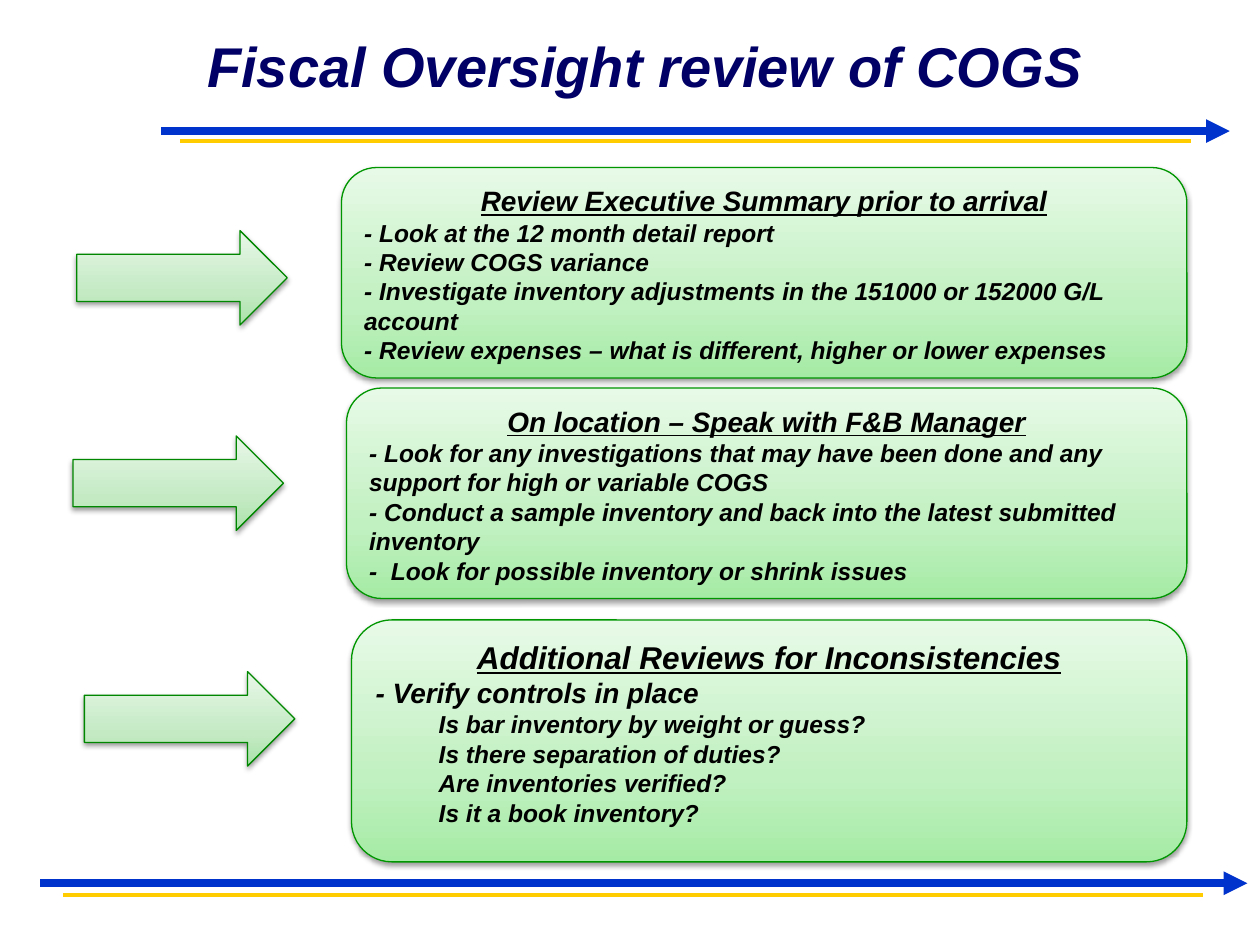
from dataclasses import dataclass
from typing import Any, NamedTuple

from pptx import Presentation
from pptx.dml.color import RGBColor as RGB
from pptx.enum.shapes import MSO_CONNECTOR as Link, MSO_SHAPE as Form
from pptx.enum.text import MSO_ANCHOR as Anchor, MSO_AUTO_SIZE as Fit, PP_ALIGN as Align
from pptx.oxml import parse_xml
from pptx.oxml.ns import nsdecls, qn
from pptx.util import Inches, Pt


@dataclass(frozen=True)
class Theme:
    font: str = "Arial"
    navy: str = "000066"
    ink: str = "000000"
    blue: str = "0033CC"
    gold: str = "FFCC00"
    title: int = 32
    large: int = 18
    head: int = 16
    body: int = 14
    thick: float = 4.5
    thin: float = 2.25
    edge: float = 0.75


class Paint(NamedTuple):
    stops: tuple[str, str, str]
    line: str


class Rule(NamedTuple):
    left: float
    right: float
    y: float
    color: str
    width: float
    arrow: bool


class Line(NamedTuple):
    text: str
    size: int
    level: int = 0


class Card(NamedTuple):
    left: float
    top: float
    height: float
    head: Line
    lines: list[Line]


class Arrow(NamedTuple):
    left: float
    top: float


LOOK = Theme()
MINT = Paint(("A5EBA5", "C1F0C1", "E7FAE7"), "009600")
SAGE = Paint(("AAE2AA", "C4EAC4", "E8F7E8"), "008700")
EDGE = 9.42

RULES = [
    Rule(1.28, 9.76, 1.04, LOOK.blue, LOOK.thick, True),
    Rule(1.43, 9.45, 1.12, LOOK.gold, LOOK.thin, False),
    Rule(0.32, 9.9, 7.01, LOOK.blue, LOOK.thick, True),
    Rule(0.5, 9.55, 7.1, LOOK.gold, LOOK.thin, False),
]
CARDS = [
    Card(2.75, 3.08, 1.67, Line("On location – Speak with F&B Manager", LOOK.head), [
        Line("- Look for any investigations that may have been done and any "
             "support for high or variable COGS", LOOK.body),
        Line("- Conduct a sample inventory and back into the latest submitted inventory", LOOK.body),
        Line("-  Look for possible inventory or shrink issues", LOOK.body),
    ]),
    Card(2.71, 1.33, 1.67, Line("Review Executive Summary prior to arrival", LOOK.head), [
        Line("- Look at the 12 month detail report", LOOK.body),
        Line("- Review COGS variance", LOOK.body),
        Line("- Investigate inventory adjustments in the 151000 or 152000 G/L account", LOOK.body),
        Line("- Review expenses – what is different, higher or lower expenses", LOOK.body),
    ]),
    Card(2.79, 4.92, 1.92, Line("Additional Reviews for Inconsistencies", LOOK.large), [
        Line("- Verify controls in place", LOOK.head),
        Line("Is bar inventory by weight or guess?", LOOK.body, 1),
        Line("Is there separation of duties?", LOOK.body, 1),
        Line("Are inventories verified?", LOOK.body, 1),
        Line("Is it a book inventory?", LOOK.body, 1),
    ]),
]
ARROWS = [Arrow(0.58, 3.46), Arrow(0.61, 1.83), Arrow(0.67, 5.33)]


def assign(item: Any, form: dict[str, Any]) -> None:
    """Set each named value on an object."""
    for name, value in form.items():
        setattr(item, name, value)


def style(font: Any, size: int, color: str, under: bool = False) -> None:
    """Give a font the bold italic look of the slide."""
    assign(font, {"name": LOOK.font, "size": Pt(size), "bold": True,
                  "italic": True, "underline": under})
    font.color.rgb = RGB.from_string(color)


def draw_title(slide: Any, text: str) -> None:
    """Place and format the title."""
    title = slide.shapes.title
    assign(title, {"left": Inches(1.08), "top": Inches(0.25),
                   "width": Inches(8.08), "height": Inches(0.54)})
    frame = title.text_frame
    frame.text = text
    assign(frame, {"margin_left": Inches(0.05), "margin_right": Inches(0.05),
                   "margin_top": 0, "margin_bottom": 0, "word_wrap": True,
                   "auto_size": Fit.SHAPE_TO_FIT_TEXT, "vertical_anchor": Anchor.MIDDLE})
    para = frame.paragraphs[0]
    para.alignment = Align.CENTER
    style(para.font, LOOK.title, LOOK.navy)


def draw_rule(slide: Any, rule: Rule) -> None:
    """Draw one level line, with an arrowhead if asked."""
    link = slide.shapes.add_connector(Link.STRAIGHT, Inches(rule.left), Inches(rule.y),
                                      Inches(rule.right), Inches(rule.y))
    link.line.width = Pt(rule.width)
    link.line.color.rgb = RGB.from_string(rule.color)
    if rule.arrow:
        link.line._get_or_add_ln().append(parse_xml(f'<a:tailEnd {nsdecls("a")} type="triangle"/>'))
    link._element.spPr.append(parse_xml(f'<a:effectLst {nsdecls("a")}/>'))


def draw_shape(slide: Any, form: Form, box: tuple[float, ...], paint: Paint) -> Any:
    """Add a shape with a gradient, a thin edge and a soft shadow."""
    shape = slide.shapes.add_shape(form, *map(Inches, box))
    shape.line.width = Pt(LOOK.edge)
    shape.line.color.rgb = RGB.from_string(paint.line)
    shape.shadow.inherit = False
    stops = "".join(f'<a:gs pos="{pos}000"><a:srgbClr val="{color}"/></a:gs>'
                    for pos, color in zip((0, 35, 100), paint.stops))
    props = shape._element.spPr
    props.find(qn("a:prstGeom")).addnext(parse_xml(
        f'<a:gradFill {nsdecls("a")} rotWithShape="1"><a:gsLst>{stops}</a:gsLst>'
        '<a:lin ang="16200000" scaled="0"/></a:gradFill>'))
    props.find(qn("a:effectLst")).append(parse_xml(
        f'<a:outerShdw {nsdecls("a")} blurRad="{Pt(3.1)}" dist="{Pt(1.6)}" dir="5400000" '
        'rotWithShape="0"><a:srgbClr val="000000"><a:alpha val="38000"/></a:srgbClr></a:outerShdw>'))
    return shape


def draw_card(slide: Any, card: Card) -> None:
    """Draw a rounded card with a heading and its lines."""
    box = (card.left, card.top, EDGE - card.left, card.height)
    frame = draw_shape(slide, Form.ROUNDED_RECTANGLE, box, MINT).text_frame
    assign(frame, {"word_wrap": True, "vertical_anchor": Anchor.TOP})
    for i, line in enumerate([card.head, *card.lines]):
        para = frame.add_paragraph() if i else frame.paragraphs[0]
        assign(para, {"alignment": Align.LEFT if i else Align.CENTER, "level": line.level})
        run = para.add_run()
        run.text = line.text
        style(run.font, line.size, LOOK.ink, under=i == 0)


def main() -> None:
    """Build and save the slide."""
    deck = Presentation()
    assign(deck, {"slide_width": Inches(10), "slide_height": Inches(7.5)})
    slide = deck.slides.add_slide(deck.slide_layouts[5])
    for rule in RULES:
        draw_rule(slide, rule)
    draw_title(slide, "Fiscal Oversight review of COGS")
    for card in CARDS:
        draw_card(slide, card)
    for arrow in ARROWS:
        draw_shape(slide, Form.RIGHT_ARROW, (*arrow, 1.67, 0.75), SAGE)
    deck.save("out.pptx")


if __name__ == "__main__":
    main()
